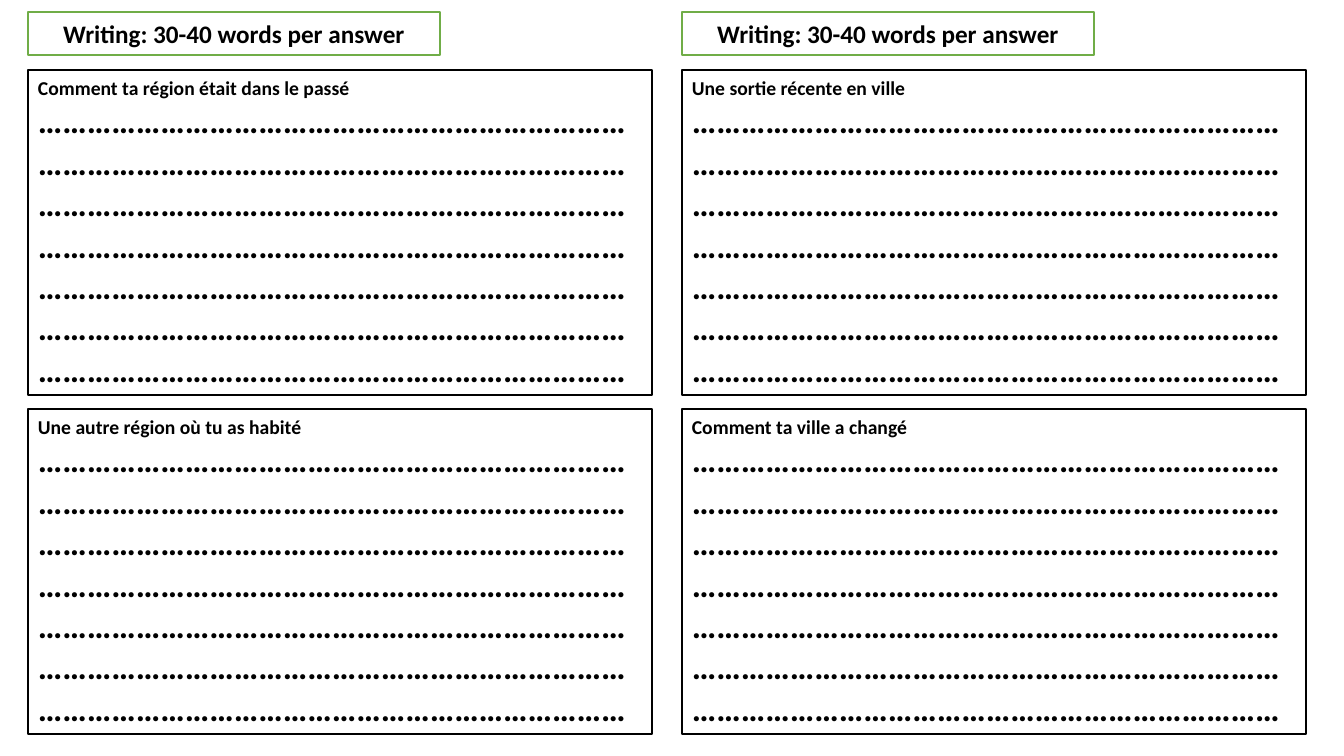
from dataclasses import dataclass

from pptx import Presentation
from pptx.dml.color import RGBColor
from pptx.enum.shapes import MSO_SHAPE
from pptx.enum.text import MSO_ANCHOR, PP_ALIGN
from pptx.util import Emu, Pt

RECTANGLE = MSO_SHAPE.RECTANGLE
MIDDLE = MSO_ANCHOR.MIDDLE
LEFT = PP_ALIGN.LEFT
CENTER = PP_ALIGN.CENTER

EMU_PER_PX = 914400 / 100.8
SLIDE_WIDTH, SLIDE_HEIGHT = 1344, 756
COLUMN_LEFTS = (28, 682)
HEADER_TOP, HEADER_WIDTH, HEADER_HEIGHT = 12, 412, 43
PANEL_TOP, PANEL_STEP = 70, 339
PANEL_WIDTH, PANEL_HEIGHT = 624, 325

BLACK, WHITE, GREEN = "000000", "FFFFFF", "70AD47"
HEADING = "Writing: 30-40 words per answer"
TOPICS = (
    ("Comment ta région était dans le passé", "Une autre région où tu as habité"),
    ("Une sortie récente en ville", "Comment ta ville a changé"),
)
DOTTED_LINE = "…" * 24
REMAINING_LINES = " ".join([DOTTED_LINE] * 6)


@dataclass(frozen=True)
class TextLine:
    text: str
    size: float
    alignment: PP_ALIGN = LEFT


@dataclass(frozen=True)
class Box:
    left: int
    top: int
    width: int
    height: int
    outline: str
    lines: tuple[TextLine, ...]


def px(length: int) -> Emu:
    return Emu(round(length * EMU_PER_PX))


def color(value: str) -> RGBColor:
    return RGBColor.from_string(value)


def write_line(paragraph, line: TextLine) -> None:
    paragraph.alignment = line.alignment
    run = paragraph.add_run()
    run.text = line.text
    font_format = {"name": "Calibri", "size": Pt(line.size), "bold": True}
    for attribute, value in font_format.items():
        setattr(run.font, attribute, value)
    run.font.color.rgb = color(BLACK)


def draw_box(slide, box: Box) -> None:
    shape = slide.shapes.add_shape(
        RECTANGLE, px(box.left), px(box.top), px(box.width), px(box.height)
    )
    shape.shadow.inherit = False
    shape.fill.solid()
    shape.fill.fore_color.rgb = color(WHITE)
    shape.line.color.rgb = color(box.outline)
    shape.line.width = Pt(1)
    frame = shape.text_frame
    frame_format = {"word_wrap": True, "vertical_anchor": MIDDLE}
    for attribute, value in frame_format.items():
        setattr(frame, attribute, value)
    for index, line in enumerate(box.lines):
        paragraph = frame.add_paragraph() if index else frame.paragraphs[0]
        write_line(paragraph, line)


def column_boxes(left: int, topics: tuple[str, ...]) -> list[Box]:
    panels = [
        Box(
            left, PANEL_TOP + row * PANEL_STEP, PANEL_WIDTH, PANEL_HEIGHT, BLACK,
            (
                TextLine(topic, 14),
                TextLine(DOTTED_LINE, 24.6),
                TextLine(REMAINING_LINES, 24.6),
            ),
        )
        for row, topic in enumerate(topics)
    ]
    header = Box(
        left, HEADER_TOP, HEADER_WIDTH, HEADER_HEIGHT, GREEN,
        (TextLine(HEADING, 18, CENTER),),
    )
    return [*panels, header]


def main() -> None:
    presentation = Presentation()
    presentation.slide_width = px(SLIDE_WIDTH)
    presentation.slide_height = px(SLIDE_HEIGHT)
    slide = presentation.slides.add_slide(presentation.slide_layouts[6])
    for left, topics in zip(COLUMN_LEFTS, TOPICS):
        for box in column_boxes(left, topics):
            draw_box(slide, box)
    presentation.save("out.pptx")


if __name__ == "__main__":
    main()
